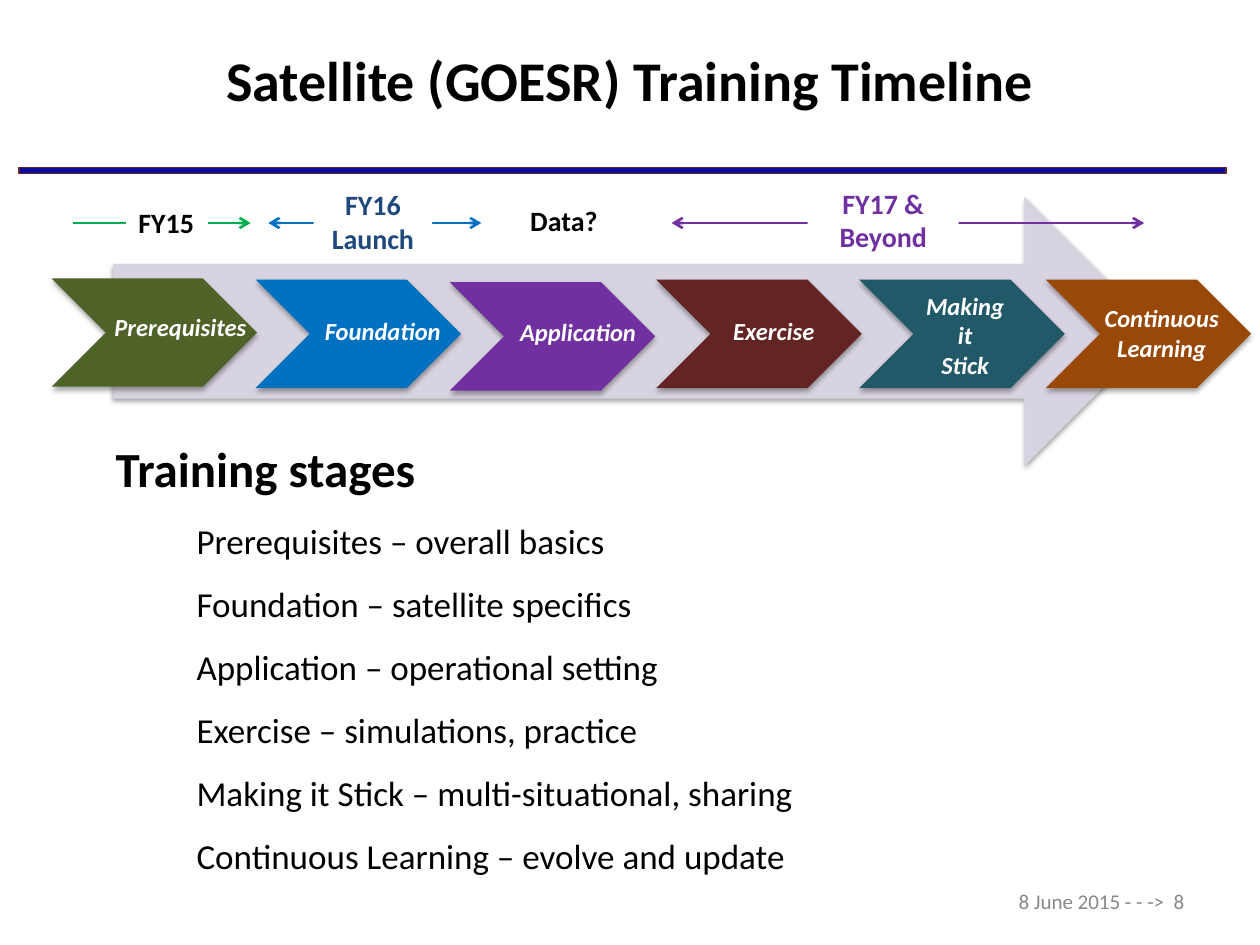
import pptx
import pptx.dml.color
import pptx.enum.shapes
import pptx.enum.text
import pptx.oxml.ns
import pptx.util
from dataclasses import dataclass
from lxml import etree

Inches = pptx.util.Inches
Pt = pptx.util.Pt
PRESET = pptx.enum.shapes.MSO_SHAPE
ALIGN = pptx.enum.text.PP_ALIGN
ANCHOR = pptx.enum.text.MSO_ANCHOR
FIT = pptx.enum.text.MSO_AUTO_SIZE
Box = tuple[float, float, float, float]


@dataclass(frozen=True)
class Theme:
    font: str = "Calibri"
    ink: str = "000000"
    paper: str = "FFFFFF"
    muted: str = "888888"
    rule: str = "0A0A9E"
    rule_edge: str = "632423"
    band: str = "D8D3E0"
    title_size: int = 32
    heading_size: int = 28
    body_size: int = 20
    period_size: int = 16
    stage_size: int = 14
    footer_size: int = 12


THEME = Theme()


@dataclass(frozen=True)
class Stage:
    left: float
    top: float
    color: str
    label: str
    label_box: Box
    align: ALIGN = ALIGN.LEFT
    wrap: bool = True


@dataclass(frozen=True)
class Period:
    label: str
    label_box: Box
    color: str
    fill: str | None = THEME.paper
    align: ALIGN = ALIGN.CENTER
    wrap: bool = True


@dataclass(frozen=True)
class Span:
    start: float
    end: float
    color: str
    both_ends: bool = True


CHEVRON_SIZE = (1.63, 0.86)
SPAN_Y = 1.77
STAGES = [
    Stage(0.41, 2.21, "4F6228", "Prerequisites", (0.81, 2.43, 1.28, 0.34)),
    Stage(2.03, 2.22, "0070C0", "Foundation", (2.48, 2.46, 1.28, 0.34)),
    Stage(3.57, 2.24, "7030A0", "Application", (4.03, 2.47, 1.14, 0.34), wrap=False),
    Stage(5.21, 2.22, "632523", "Exercise", (5.72, 2.46, 0.95, 0.34)),
    Stage(6.82, 2.22, "215968", "Making it\nStick", (7.19, 2.26, 0.94, 0.81), ALIGN.CENTER),
    Stage(8.3, 2.22, "984807", "Continuous Learning", (8.63, 2.36, 1.18, 0.57), ALIGN.CENTER),
]
SPANS = [
    Span(0.58, 1.99, "00B050", both_ends=False),
    Span(5.33, 9.08, "7030A0"),
    Span(2.13, 3.82, "0070C0"),
]
PERIODS = [
    Period("FY15", (1, 1.58, 0.65, 0.37), THEME.ink, align=ALIGN.LEFT, wrap=False),
    Period("FY17 & Beyond", (6.41, 1.43, 1.2, 0.64), "7030A0"),
    Period("FY16\nLaunch", (2.49, 1.44, 0.94, 0.64), "1F497D"),
    Period("Data?", (4.11, 1.57, 0.88, 0.37), THEME.ink, fill=None, align=ALIGN.LEFT),
]
STAGE_NOTES = [
    "Prerequisites – overall basics",
    "Foundation – satellite specifics",
    "Application – operational setting",
    "Exercise – simulations, practice",
    "Making it Stick – multi-situational, sharing",
    "Continuous Learning – evolve and update",
]


def rgb(color: str) -> pptx.dml.color.RGBColor:
    return pptx.dml.color.RGBColor.from_string(color)


def place(shape, box: Box) -> None:
    shape.left, shape.top, shape.width, shape.height = map(Inches, box)


def write(frame, text: str, size: int, color: str, bold: bool = False,
          italic: bool = False, align: ALIGN = ALIGN.LEFT) -> None:
    frame.text = text
    for paragraph in frame.paragraphs:
        paragraph.alignment = align
        for run in paragraph.runs:
            run.font.name = THEME.font
            run.font.size = Pt(size)
            run.font.bold = bold
            run.font.italic = italic
            run.font.color.rgb = rgb(color)


def add_text(slide, box: Box, text: str, size: int, color: str, wrap: bool = True,
             fill: str | None = None, **style):
    label = slide.shapes.add_textbox(*map(Inches, box))
    if fill:
        label.fill.solid()
        label.fill.fore_color.rgb = rgb(fill)
    write(label.text_frame, text, size, color, **style)
    label.text_frame.word_wrap = wrap
    label.text_frame.auto_size = FIT.SHAPE_TO_FIT_TEXT
    return label


def add_block(slide, preset: PRESET, box: Box, fill: str):
    block = slide.shapes.add_shape(preset, *map(Inches, box))
    block.shadow.inherit = False
    block.fill.solid()
    block.fill.fore_color.rgb = rgb(fill)
    block.line.fill.background()
    return block


def add_drop_shadow(shape) -> None:
    qn = pptx.oxml.ns.qn
    effects = shape._element.spPr.find(qn("a:effectLst"))
    shadow = etree.SubElement(effects, qn("a:outerShdw"), blurRad=str(Pt(3.1)),
                              dist=str(Pt(1.8)), dir="5400000", rotWithShape="0")
    shade = etree.SubElement(shadow, qn("a:srgbClr"), val=THEME.ink)
    etree.SubElement(shade, qn("a:alpha"), val="35000")


def add_span(slide, span: Span) -> None:
    qn = pptx.oxml.ns.qn
    arrow = slide.shapes.add_connector(
        pptx.enum.shapes.MSO_CONNECTOR.STRAIGHT,
        Inches(span.start), Inches(SPAN_Y), Inches(span.end), Inches(SPAN_Y))
    arrow.line.color.rgb = rgb(span.color)
    arrow.line.width = Pt(1.5)
    line = arrow.line._get_or_add_ln()
    for end in ("a:headEnd", "a:tailEnd") if span.both_ends else ("a:tailEnd",):
        etree.SubElement(line, qn(end), type="arrow")
    etree.SubElement(arrow._element.spPr, qn("a:effectLst"))


def fill_title(title) -> None:
    place(title, (0.75, 0, 8.5, 1.25))
    frame = title.text_frame
    write(frame, "Satellite (GOESR) Training Timeline", THEME.title_size, THEME.ink,
          bold=True, align=ALIGN.CENTER)
    frame.auto_size = FIT.NONE
    frame.vertical_anchor = ANCHOR.MIDDLE


def fill_stage_notes(body) -> None:
    place(body, (1.46, 4.07, 5, 2.96))
    frame = body.text_frame
    write(frame, "\n".join(STAGE_NOTES), THEME.body_size, THEME.ink)
    frame.auto_size = FIT.NONE
    for index, paragraph in enumerate(frame.paragraphs):
        properties = paragraph._p.get_or_add_pPr()
        properties.set("marL", "0")
        properties.set("indent", "0")
        etree.SubElement(properties, pptx.oxml.ns.qn("a:buNone"))
        paragraph.space_before = Pt(12 if index else 0)


def main() -> None:
    deck = pptx.Presentation()
    deck.slide_width, deck.slide_height = Inches(10), Inches(7.5)
    slide = deck.slides.add_slide(deck.slide_layouts[1])
    fill_title(slide.shapes.title)
    fill_stage_notes(slide.placeholders[1])

    rule = add_block(slide, PRESET.RECTANGLE, (0.15, 1.33, 9.58, 0.05), THEME.rule)
    rule.line.color.rgb = rgb(THEME.rule_edge)
    rule.line.width = Pt(0.75)
    footer = add_text(slide, (7.17, 6.95, 2.33, 0.4), "8 June 2015 - - ->  8",
                      THEME.footer_size, THEME.muted, align=ALIGN.RIGHT)
    footer.text_frame.auto_size = FIT.NONE
    footer.text_frame.vertical_anchor = ANCHOR.MIDDLE

    add_drop_shadow(add_block(slide, PRESET.RIGHT_ARROW, (0.9, 1.56, 8.3, 2.14), THEME.band))
    for stage in STAGES:
        add_drop_shadow(add_block(slide, PRESET.CHEVRON,
                                  (stage.left, stage.top, *CHEVRON_SIZE), stage.color))
    for span in SPANS:
        add_span(slide, span)
    for period in PERIODS:
        add_text(slide, period.label_box, period.label, THEME.period_size, period.color,
                 wrap=period.wrap, fill=period.fill, bold=True, align=period.align)
    for stage in STAGES:
        add_text(slide, stage.label_box, stage.label, THEME.stage_size, THEME.paper,
                 wrap=stage.wrap, bold=True, italic=True, align=stage.align)
    add_text(slide, (0.82, 3.43, 2.94, 0.57), "Training stages",
             THEME.heading_size, THEME.ink, bold=True)
    deck.save("out.pptx")


if __name__ == "__main__":
    main()
